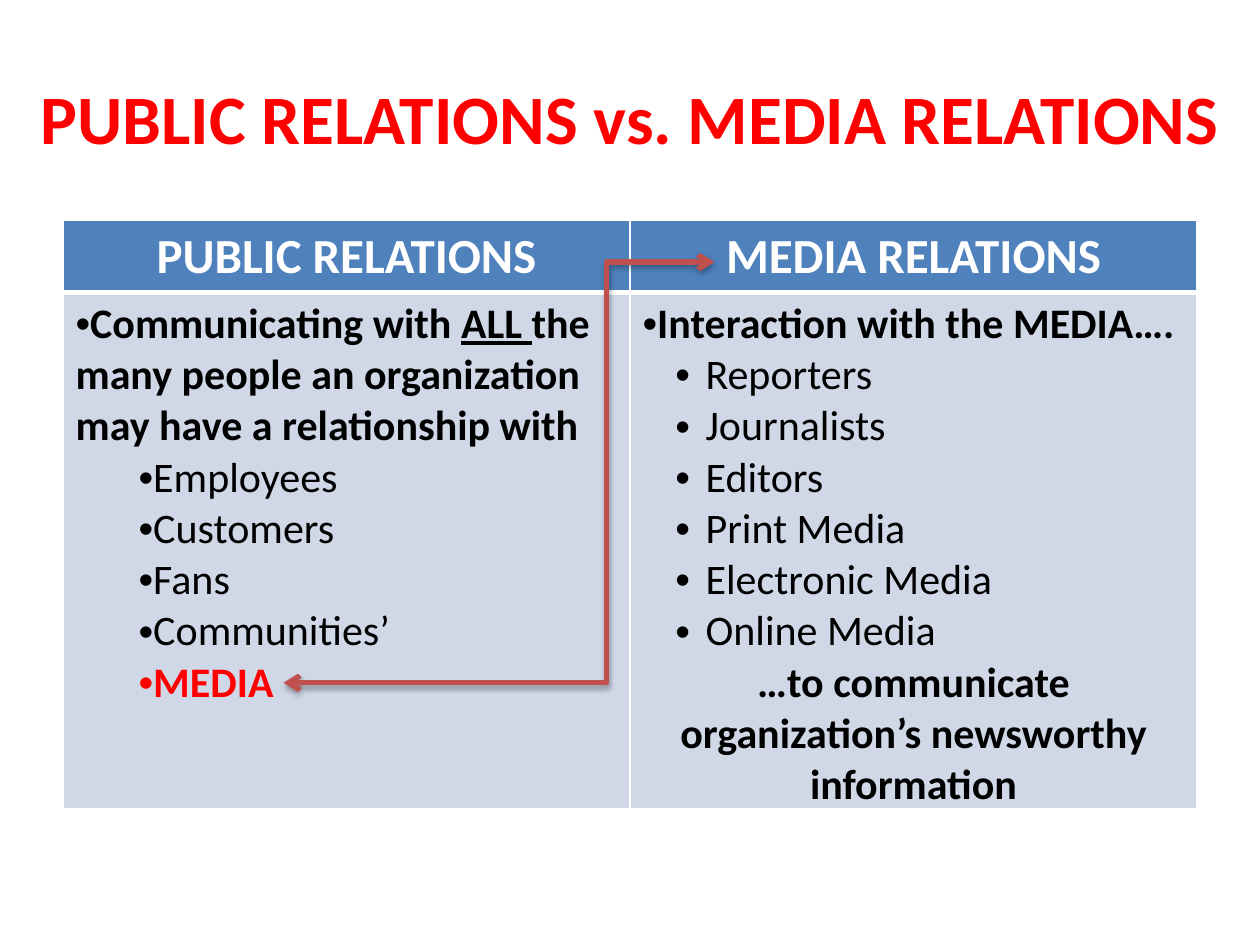
import pptx
import pptx.util
import pptx.dml.color
import pptx.enum.shapes
import pptx.enum.text
import pptx.oxml
import pptx.oxml.ns
import lxml.etree

Inches, Pt = pptx.util.Inches, pptx.util.Pt
Align = pptx.enum.text.PP_ALIGN
Anchor = pptx.enum.text.MSO_ANCHOR

# Content: each column has an opening line, a list, and how the list is set
TITLE = "PUBLIC RELATIONS vs. MEDIA RELATIONS"
COLUMNS = [
    {
        "heading": "PUBLIC RELATIONS",
        "lead": [("Communicating with ", False), ("ALL ", True),
                 ("the many people an organization may have a relationship with", False)],
        "items": ["Employees", "Customers", "Fans", "Communities’"],
        "highlight": "MEDIA",
        "closing": None,
        "hanging": 0,
    },
    {
        "heading": "MEDIA RELATIONS",
        "lead": [("Interaction with the MEDIA….", False)],
        "items": ["Reporters", "Journalists", "Editors", "Print Media",
                  "Electronic Media", "Online Media"],
        "highlight": None,
        "closing": "…to communicate organization’s newsworthy information",
        "hanging": 0.24,
    },
]

THEME = {
    "font": "Calibri",
    "title_size": 39.6, "heading_size": 28, "body_size": 24,
    "accent": "FF0000", "text": "000000", "light": "FFFFFF",
    "header_fill": "4F81BD", "body_fill": "D0D8E8", "arrow": "C0504D",
}

# Layout in inches
SLIDE_WIDTH, SLIDE_HEIGHT = 10, 7.5
MARGIN = SLIDE_WIDTH / 20
TABLE_TOP = 1.75
ROW_HEIGHTS = (0.57, 4.1)
LIST_INDENT = 0.5
ARROW_START, ARROW_END, ARROW_BEND = (2.25, 5.42), (5.67, 2.08), 0.75


def color(name):
    return pptx.dml.color.RGBColor.from_string(THEME[name])


def xml(text):
    namespace = pptx.oxml.ns.nsdecls("a")
    return pptx.oxml.parse_xml(text.replace(" ", f" {namespace} ", 1))


def write(frame, text, *, size="body_size", ink="text", bold=False,
          align=Align.LEFT, bullet=False, indent=0, hanging=0):
    """Add a paragraph; text is a string or a list of (words, underlined)."""
    paragraph = frame.paragraphs[0]
    if paragraph.runs:
        paragraph = frame.add_paragraph()
    paragraph.alignment = align
    for words, underlined in [(text, False)] if isinstance(text, str) else text:
        run = paragraph.add_run()
        run.text = words
        run.font.name = THEME["font"]
        run.font.size = Pt(THEME[size])
        run.font.bold = bold
        run.font.underline = underlined
        run.font.color.rgb = color(ink)
    if bullet:
        properties = paragraph._p.get_or_add_pPr()
        properties.set("marL", str(Inches(indent)))
        properties.set("indent", str(-Inches(hanging)))
        properties.append(xml('<a:buFont typeface="Arial"/>'))
        properties.append(xml('<a:buChar char="•"/>'))


def style_cell(cell, fill, bottom=1, top=1):
    widths = {"lnL": 1, "lnR": 1, "lnT": top, "lnB": bottom}
    for side, width in widths.items():
        cell._tc.get_or_add_tcPr().append(xml(
            f'<a:{side} w="{Pt(width)}"><a:solidFill>'
            f'<a:srgbClr val="{THEME["light"]}"/></a:solidFill></a:{side}>'))
    cell.fill.solid()
    cell.fill.fore_color.rgb = color(fill)


presentation = pptx.Presentation()
presentation.slide_width = Inches(SLIDE_WIDTH)
presentation.slide_height = Inches(SLIDE_HEIGHT)
slide = presentation.slides.add_slide(presentation.slide_layouts[6])

# Title
title = slide.shapes.add_textbox(0, Inches(0.3), Inches(SLIDE_WIDTH), Inches(1.25))
title.text_frame.word_wrap = True
title.text_frame.vertical_anchor = Anchor.MIDDLE
write(title.text_frame, TITLE, size="title_size", ink="accent", bold=True,
      align=Align.CENTER)

# Comparison table
table = slide.shapes.add_table(
    len(ROW_HEIGHTS), len(COLUMNS), Inches(MARGIN), Inches(TABLE_TOP),
    Inches(SLIDE_WIDTH - 2 * MARGIN), Inches(sum(ROW_HEIGHTS))).table
for row, height in zip(table.rows, ROW_HEIGHTS):
    row.height = Inches(height)

for index, column in enumerate(COLUMNS):
    header, body = table.cell(0, index), table.cell(1, index)
    style_cell(header, "header_fill", bottom=3)
    style_cell(body, "body_fill", top=3)
    write(header.text_frame, column["heading"], size="heading_size",
          ink="light", bold=True, align=Align.CENTER)

    frame = body.text_frame
    list_format = {"bullet": True, "indent": LIST_INDENT, "hanging": column["hanging"]}
    write(frame, column["lead"], bold=True, bullet=True)
    for item in column["items"]:
        write(frame, item, **list_format)
    if column["highlight"]:
        write(frame, column["highlight"], ink="accent", bold=True, **list_format)
    if column["closing"]:
        write(frame, column["closing"], bold=True, align=Align.CENTER)

# Double-headed arrow from the MEDIA item to the media heading
arrow = slide.shapes.add_connector(
    pptx.enum.shapes.MSO_CONNECTOR.ELBOW,
    *(Inches(value) for value in ARROW_START + ARROW_END))
arrow.line.color.rgb = color("arrow")
arrow.line.width = Pt(3)
guides = arrow._element.spPr.find(pptx.oxml.ns.qn("a:prstGeom")).get_or_add_avLst()
guides.append(xml(f'<a:gd name="adj1" fmla="val {round(ARROW_BEND * 100000)}"/>'))
for end in ("headEnd", "tailEnd"):
    arrow.line._get_or_add_ln().append(xml(f'<a:{end} type="arrow"/>'))
arrow._element.spPr.append(xml(
    f'<a:effectLst ><a:outerShdw blurRad="{Pt(3.1)}" dist="{Pt(1.8)}" dir="5400000" '
    'rotWithShape="0"><a:srgbClr val="000000"><a:alpha val="35000"/></a:srgbClr>'
    '</a:outerShdw></a:effectLst>'))

presentation.save("out.pptx")
